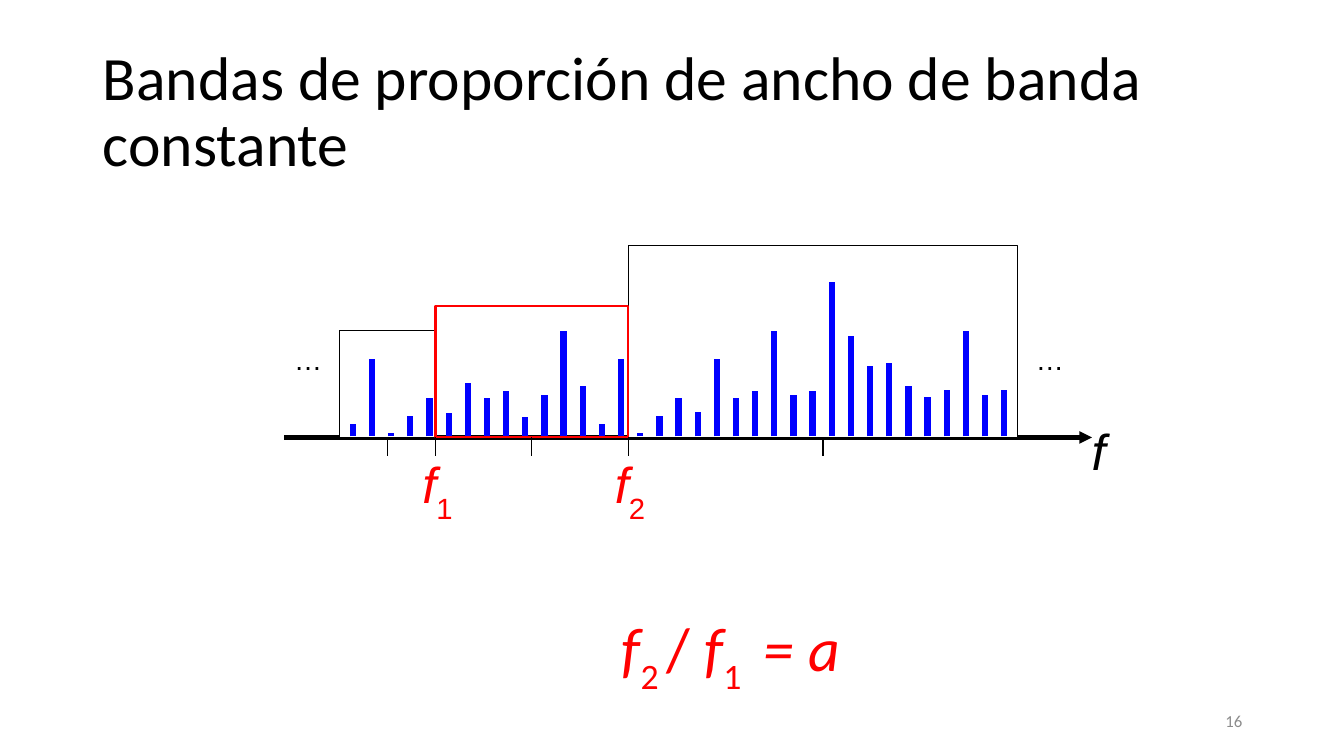
from dataclasses import dataclass

from lxml import etree
from pptx import Presentation
from pptx.dml.color import RGBColor
from pptx.enum.shapes import MSO_CONNECTOR, MSO_SHAPE
from pptx.enum.text import MSO_ANCHOR, MSO_AUTO_SIZE, PP_ALIGN
from pptx.oxml.ns import qn
from pptx.util import Inches, Pt

STRAIGHT = MSO_CONNECTOR.STRAIGHT
RECTANGLE = MSO_SHAPE.RECTANGLE
LEFT, CENTER, RIGHT = PP_ALIGN.LEFT, PP_ALIGN.CENTER, PP_ALIGN.RIGHT
TOP, MIDDLE = MSO_ANCHOR.TOP, MSO_ANCHOR.MIDDLE
BOTTOM_SIDE = 2
TITLE_ONLY = 5


@dataclass(frozen=True)
class Theme:
    black: str = "000000"
    white: str = "FFFFFF"
    red: str = "FF0000"
    blue: str = "0000FF"
    gray: str = "8C8C8C"
    text_font: str = "Calibri"
    diagram_font: str = "Arial"
    title_size: int = 44
    label_size: int = 36
    ellipsis_size: int = 20
    number_size: int = 12


THEME = Theme()

# Spectrum grid: one column per spectral line, lengths in inches
COLUMN = 0.19
FIRST_BAND = 0.55    # from the left end of the axis
FIRST_BAR = 0.68
TICK = 0.18
# Bands: first column, width in columns, height
NARROW_BAND = (0, 5, 1.06)
MIDDLE_BAND = (5, 10.05, 1.3)
WIDE_BAND = (15.05, 20.35, 1.9)
BAR_HEIGHTS = [
    0.12, 0.77, 0.03, 0.2, 0.38,
    0.23, 0.53, 0.38, 0.45, 0.19, 0.41, 1.05, 0.5, 0.12, 0.77,
    0.03, 0.2, 0.38, 0.24, 0.77, 0.38, 0.45, 1.05, 0.41, 0.45,
    1.53, 1.0, 0.7, 0.73, 0.5, 0.39, 0.46, 1.05, 0.41, 0.46,
]


def color(value):
    return RGBColor.from_string(value)


def add_line(shapes, start, end, line_color, width):
    line = shapes.add_connector(STRAIGHT, *map(Inches, (*start, *end)))
    line.line.color.rgb = color(line_color)
    line.line.width = Pt(width)
    etree.SubElement(line._element.spPr, qn("a:effectLst"))
    return line


def add_text(shapes, box, runs, size, text_color, font, align=LEFT, anchor=TOP):
    """Each run is (text, italic, subscript)."""
    frame = shapes.add_textbox(*map(Inches, box)).text_frame
    frame.word_wrap = True
    frame.vertical_anchor = anchor
    paragraph = frame.paragraphs[0]
    paragraph.alignment = align
    paragraph.font.size = Pt(size)
    paragraph.font.name = font
    paragraph.font.color.rgb = color(text_color)
    for text, italic, subscript in runs:
        run = paragraph.add_run()
        run.text = text
        run.font.italic = italic
        if subscript:
            run.font._element.set("baseline", "-30000")
    return paragraph


def add_title(slide, box, text):
    title = slide.shapes.title
    title.left, title.top, title.width, title.height = map(Inches, box)
    frame = title.text_frame
    frame.text = text
    frame.vertical_anchor = MIDDLE
    frame.auto_size = MSO_AUTO_SIZE.NONE
    paragraph = frame.paragraphs[0]
    paragraph.alignment = LEFT
    paragraph.line_spacing = 0.9
    paragraph.font.size = Pt(THEME.title_size)
    paragraph.font.name = THEME.text_font
    paragraph.font.color.rgb = color(THEME.black)


def add_spectrum(slide, box):
    left, top, width, height = box
    baseline = top + height
    shapes = slide.shapes.add_group_shape().shapes

    def column_x(column):
        return left + FIRST_BAND + column * COLUMN

    def add_band(band, line_color, line_width, fill=None):
        column, columns, band_height = band
        shape = shapes.add_shape(
            RECTANGLE, Inches(column_x(column)), Inches(baseline - band_height),
            Inches(columns * COLUMN), Inches(band_height))
        shape.shadow.inherit = False
        shape.line.color.rgb = color(line_color)
        shape.line.width = Pt(line_width)
        if fill:
            shape.fill.solid()
            shape.fill.fore_color.rgb = color(fill)
        else:
            shape.fill.background()
        return shape

    def add_tick(column):
        x = column_x(column)
        return add_line(shapes, (x, baseline), (x, baseline + TICK), THEME.black, 0.75)

    # Frequency axis
    axis = add_line(shapes, (left, baseline), (left + width, baseline), THEME.black, 3)
    etree.SubElement(axis.line._get_or_add_ln(), qn("a:tailEnd"), type="triangle")

    # Outer bands, behind the spectral lines
    wide = add_band(WIDE_BAND, THEME.black, 0.75, THEME.white)
    narrow = add_band(NARROW_BAND, THEME.black, 0.75, THEME.white)

    # Spectral lines
    bar_bottom = baseline - 0.01
    for index, bar_height in enumerate(BAR_HEIGHTS):
        x = left + FIRST_BAR + index * COLUMN
        add_line(shapes, (x, bar_bottom), (x, bar_bottom - bar_height), THEME.blue, 4.5)

    # Highlighted band, then ticks at band centres and at its limits
    middle = add_band(MIDDLE_BAND, THEME.red, 1.5)
    for band, shape in ((NARROW_BAND, narrow), (MIDDLE_BAND, middle), (WIDE_BAND, wide)):
        add_tick(band[0] + band[1] / 2).begin_connect(shape, BOTTOM_SIDE)
    for limit, band in (("1", MIDDLE_BAND), ("2", WIDE_BAND)):
        add_tick(band[0])
        add_text(shapes, (column_x(band[0]) - 0.23, baseline + 0.11, 0.75, 0.47),
                 [("f", True, False), (limit, False, True)],
                 THEME.label_size, THEME.red, THEME.diagram_font)

    # Axis name and continuation marks
    add_text(shapes, (left + width - 0.1, baseline - 0.22, 0.43, 0.47),
             [("f", True, False)], THEME.label_size, THEME.black, THEME.diagram_font)
    for x, align in ((left, LEFT), (left + width - 0.81, RIGHT)):
        add_text(shapes, (x, baseline - 0.99, 0.63, 0.39), [("…", False, False)],
                 THEME.ellipsis_size, THEME.black, THEME.diagram_font, align)


def add_equation(slide, box):
    runs = [("f", True, False), ("2 ", False, True), ("/ ", False, False),
            ("f", True, False), ("1 ", False, True), (" = a", True, False)]
    add_text(slide.shapes, box, runs, THEME.title_size, THEME.red, THEME.text_font, CENTER)


def add_slide_number(slide, box, number):
    add_text(slide.shapes, box, [(number, False, False)], THEME.number_size,
             THEME.gray, THEME.text_font, RIGHT, MIDDLE)


def main():
    presentation = Presentation()
    presentation.slide_width = Inches(13.33)
    presentation.slide_height = Inches(7.5)
    slide = presentation.slides.add_slide(presentation.slide_layouts[TITLE_ONLY])
    add_title(slide, (0.92, 0.4, 11.5, 1.45),
              "Bandas de proporción de ancho de banda constante")
    add_spectrum(slide, (2.82, 2.44, 8.01, 1.9))
    add_equation(slide, (4.88, 6, 4.74, 0.95))
    add_slide_number(slide, (9.42, 6.95, 3, 0.4), "16")
    presentation.save("out.pptx")


if __name__ == "__main__":
    main()
